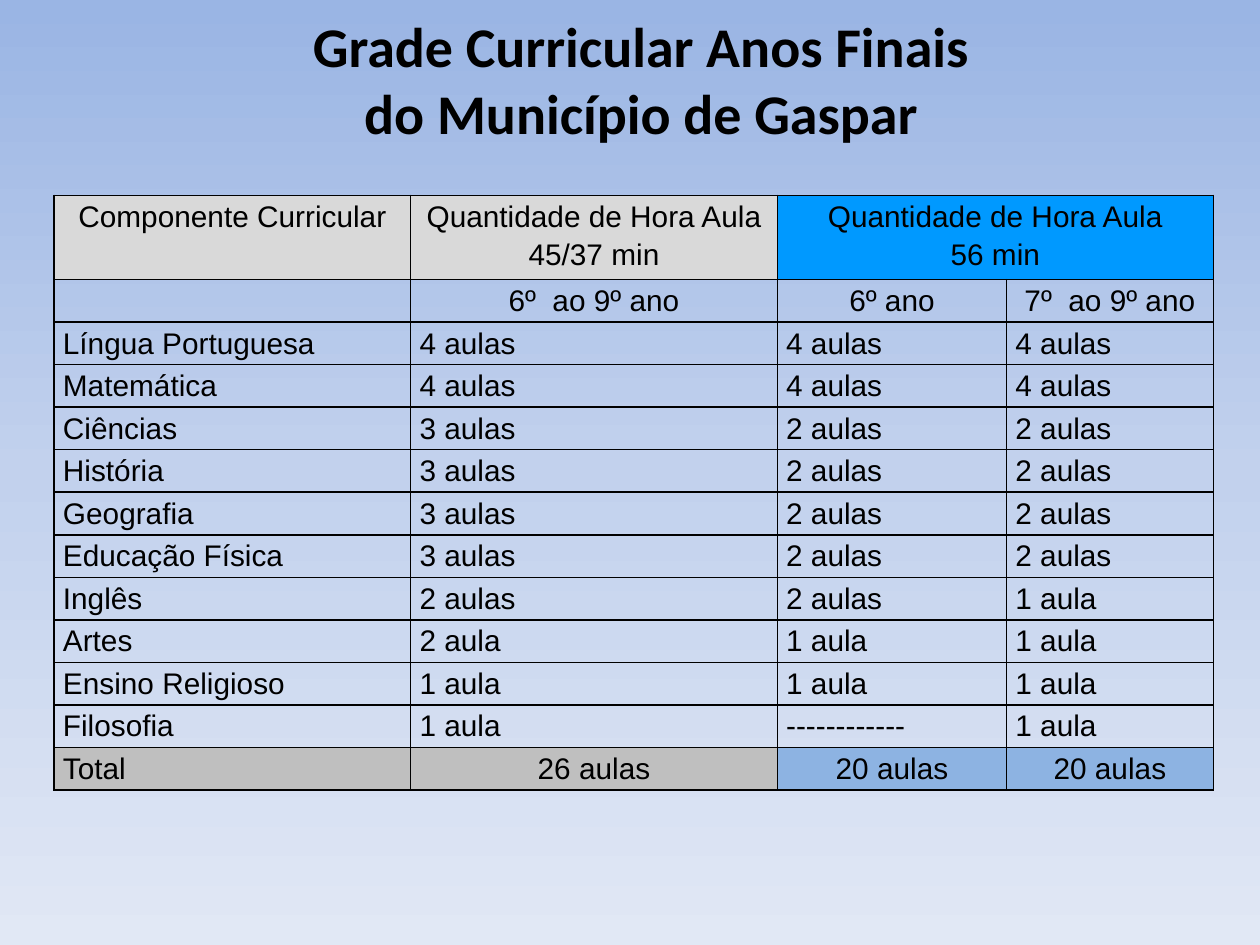
from copy import deepcopy
from dataclasses import dataclass

from lxml import etree
from pptx import Presentation
from pptx.dml.color import RGBColor
from pptx.enum.text import MSO_ANCHOR, PP_ALIGN
from pptx.oxml.ns import qn
from pptx.util import Inches, Pt

CENTER, LEFT = PP_ALIGN.CENTER, PP_ALIGN.LEFT
MIDDLE = MSO_ANCHOR.MIDDLE

BLACK = RGBColor(0x00, 0x00, 0x00)
LIGHT_GRAY = RGBColor(0xD9, 0xD9, 0xD9)
GRAY = RGBColor(0xBF, 0xBF, 0xBF)
BRIGHT_BLUE = RGBColor(0x00, 0x99, 0xFF)
SOFT_BLUE = RGBColor(0x8D, 0xB3, 0xE2)
BACKGROUND_STOPS = (
    (0, RGBColor(0x9A, 0xB5, 0xE4)),
    (0.5, RGBColor(0xC2, 0xD1, 0xED)),
    (1, RGBColor(0xE1, 0xE8, 0xF5)),
)

COLUMN_WIDTHS = (2.83, 2.91, 1.82, 1.64)
HEADER_HEIGHT = 0.67
TABLE_HEIGHT = 4.72


@dataclass(frozen=True)
class TableRow:
    texts: tuple
    fills: tuple = (None,) * 4
    aligns: tuple = (LEFT,) * 4


ROWS = (
    TableRow(
        ("Componente Curricular", "Quantidade de Hora Aula 45/37 min",
         "Quantidade de Hora Aula\n56 min", ""),
        (LIGHT_GRAY, LIGHT_GRAY, BRIGHT_BLUE, BRIGHT_BLUE),
        (CENTER,) * 4,
    ),
    TableRow(("", "6º  ao 9º ano", "6º ano", "7º  ao 9º ano"), aligns=(CENTER,) * 4),
    TableRow(("Língua Portuguesa", "4 aulas", "4 aulas", "4 aulas")),
    TableRow(("Matemática", "4 aulas", "4 aulas", "4 aulas")),
    TableRow(("Ciências", "3 aulas", "2 aulas", "2 aulas")),
    TableRow(("História", "3 aulas", "2 aulas", "2 aulas")),
    TableRow(("Geografia", "3 aulas", "2 aulas", "2 aulas")),
    TableRow(("Educação Física", "3 aulas", "2 aulas", "2 aulas")),
    TableRow(("Inglês", "2 aulas", "2 aulas", "1 aula")),
    TableRow(("Artes", "2 aula", "1 aula", "1 aula")),
    TableRow(("Ensino Religioso", "1 aula", "1 aula", "1 aula")),
    TableRow(("Filosofia", "1 aula", "------------", "1 aula")),
    TableRow(
        ("Total", "26 aulas", "20 aulas", "20 aulas"),
        (GRAY, GRAY, SOFT_BLUE, SOFT_BLUE),
        (LEFT, CENTER, CENTER, CENTER),
    ),
)


def set_background(page) -> None:
    fill = page.background.fill
    fill.gradient()
    fill.gradient_angle = 270
    stop_list = page.element.find(".//" + qn("a:gsLst"))
    stop_list.append(deepcopy(stop_list[-1]))
    for stop, (position, color) in zip(fill.gradient_stops, BACKGROUND_STOPS):
        stop.position = position
        stop.color.rgb = color


def set_font(para, name: str, size: float, bold: bool = False) -> None:
    font = para.font
    font.name, font.size, font.bold = name, Pt(size), bold
    font.color.rgb = BLACK


def add_title(page) -> None:
    box = page.shapes.add_textbox(Inches(0.59), Inches(0), Inches(9), Inches(1.25))
    frame = box.text_frame
    frame.word_wrap = True
    frame.vertical_anchor = MIDDLE
    para = frame.paragraphs[0]
    para.text = "Grade Curricular Anos Finais\vdo Município de Gaspar"
    para.alignment = CENTER
    set_font(para, "Calibri", 32, bold=True)


def add_borders(cell) -> None:
    properties = cell._tc.get_or_add_tcPr()
    for side in ("lnL", "lnR", "lnT", "lnB"):
        line = etree.SubElement(properties, qn(f"a:{side}"), w=str(Pt(1)))
        solid = etree.SubElement(line, qn("a:solidFill"))
        etree.SubElement(solid, qn("a:srgbClr"), val=str(BLACK))


def fill_cell(cell, text: str, color: RGBColor | None, align: PP_ALIGN) -> None:
    cell.margin_left = cell.margin_right = Inches(0.07)
    cell.margin_top = cell.margin_bottom = Inches(0)
    add_borders(cell)
    if color is None:
        cell.fill.background()
    else:
        cell.fill.solid()
        cell.fill.fore_color.rgb = color
    cell.text = text
    for para in cell.text_frame.paragraphs:
        para.alignment = align
        para.line_spacing = 1.15
        set_font(para, "Arial", 17)


def add_curriculum_table(page) -> None:
    table = page.shapes.add_table(
        len(ROWS), len(COLUMN_WIDTHS), Inches(0.43), Inches(1.55),
        Inches(sum(COLUMN_WIDTHS)), Inches(TABLE_HEIGHT),
    ).table
    table.first_row = table.horz_banding = False
    for column, width in zip(table.columns, COLUMN_WIDTHS):
        column.width = Inches(width)
    body_height = (TABLE_HEIGHT - HEADER_HEIGHT) / (len(ROWS) - 1)
    for index, row in enumerate(ROWS):
        table.rows[index].height = Inches(body_height if index else HEADER_HEIGHT)
        for cell, text, color, align in zip(
            table.rows[index].cells, row.texts, row.fills, row.aligns
        ):
            fill_cell(cell, text, color, align)
    table.cell(0, 2).merge(table.cell(0, 3))


def main() -> None:
    deck = Presentation()
    deck.slide_width, deck.slide_height = Inches(10), Inches(7.5)
    page = deck.slides.add_slide(deck.slide_layouts[6])
    set_background(page)
    add_title(page)
    add_curriculum_table(page)
    deck.save("out.pptx")


if __name__ == "__main__":
    main()
